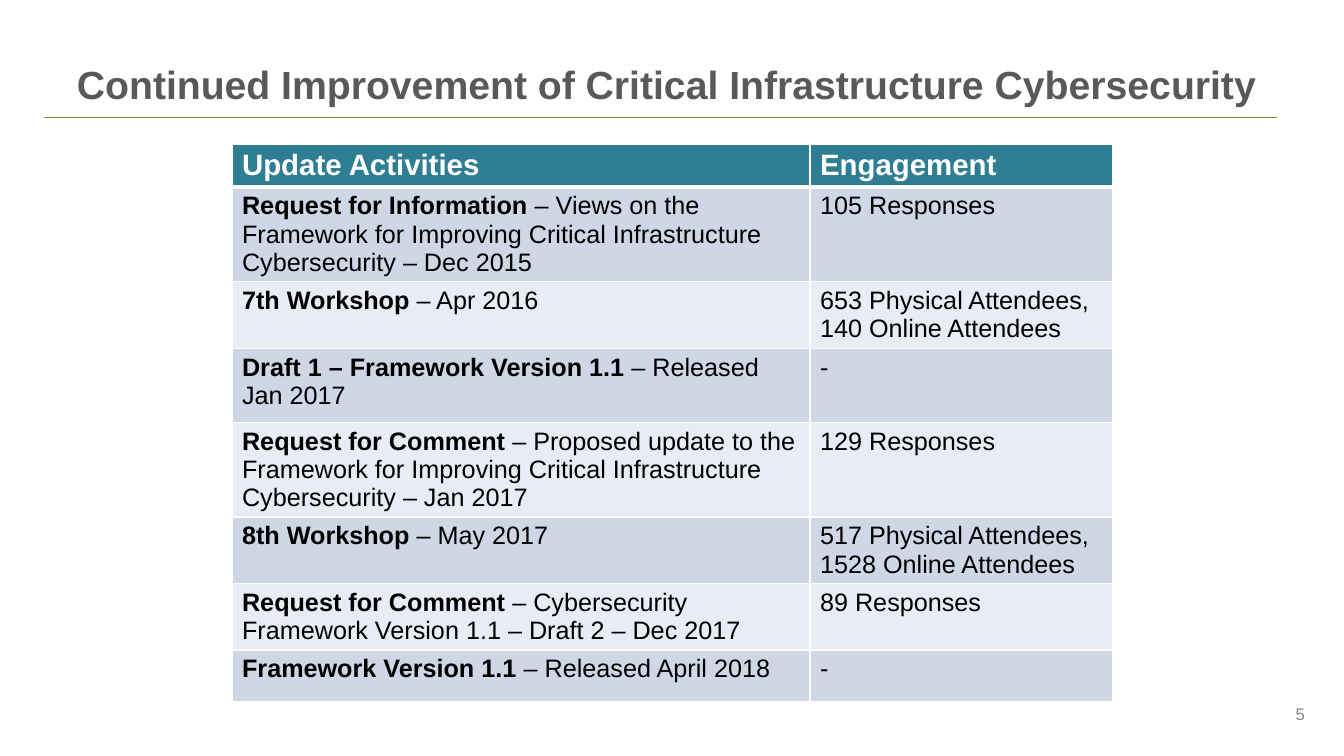
from lxml.etree import SubElement
from pptx import Presentation
from pptx.dml.color import RGBColor as RGB
from pptx.enum.shapes import MSO_CONNECTOR as LINE
from pptx.enum.text import MSO_ANCHOR as ANCHOR, PP_ALIGN as ALIGN
from pptx.oxml import parse_xml
from pptx.oxml.ns import nsdecls, qn
from pptx.util import Pt

PX = 914400 / 100.8
COLORS = {
    "title": "595959", "rule": "76923C", "page": "888888",
    "head": "2E7D92", "odd": "CFD7E7", "even": "E8ECF4",
    "white": "FFFFFF", "black": "000000",
}
HEADS = ("Update Activities", "Engagement")
# bold lead, rest of the activity, engagement, least row height
ROWS = [
    ("Request for Information ", "– Views on the Framework for Improving "
     "Critical Infrastructure Cybersecurity – Dec 2015", "105 Responses", 59),
    ("7th Workshop ", "– Apr 2016",
     "653 Physical Attendees, 140 Online Attendees", 52),
    ("Draft 1 – Framework Version 1.1 ", "– Released Jan 2017", "-", 74),
    ("Request for Comment ", "– Proposed update to the Framework for Improving "
     "Critical Infrastructure Cybersecurity – Jan 2017", "129 Responses", 74),
    ("8th Workshop ", "– May 2017",
     "517 Physical Attendees, 1528 Online Attendees", 52),
    ("Request for Comment ", "– Cybersecurity Framework Version 1.1 – Draft 2 "
     "– Dec 2017", "89 Responses", 59),
    ("Framework Version 1.1 ", "– Released April 2018", "-", 52),
]


def px(n):
    return round(n * PX)


def color(key):
    return RGB.from_string(COLORS[key])


def write(frame, text, size=18, ink="black", bold=False, align=None, space=None):
    """Add a run of text to the first paragraph of a frame."""
    para = frame.paragraphs[0]
    if align is not None:
        para.alignment = align
    if space is not None:
        para.line_spacing = space
    run = para.add_run()
    run.text = text
    font = run.font
    font.name, font.size, font.bold = "Arial", Pt(size), bold
    font.color.rgb = color(ink)


def label(slide, box, text, anchor, side=10, **style):
    frame = slide.shapes.add_textbox(*map(px, box)).text_frame
    frame.word_wrap = True
    frame.vertical_anchor = anchor
    frame.margin_left = frame.margin_right = px(side)
    frame.margin_top = frame.margin_bottom = px(5)
    write(frame, text, **style)


def rule(slide, x, y, width):
    line = slide.shapes.add_connector(
        LINE.STRAIGHT, px(x), px(y), px(x + width), px(y))
    line.line.color.rgb = color("rule")
    line.line.width = Pt(0.75)
    SubElement(line._element.spPr, qn("a:effectLst"))


def paint(cell, fill, top=1, bottom=1):
    """Fill a cell and draw its white borders, widths in points."""
    cell.fill.solid()
    cell.fill.fore_color.rgb = color(fill)
    props = cell._tc.get_or_add_tcPr()
    for i, (edge, width) in enumerate(zip("LRTB", (1, 1, top, bottom))):
        props.insert(i, parse_xml(
            f'<a:ln{edge} {nsdecls("a")} w="{Pt(width)}"><a:solidFill>'
            f'<a:srgbClr val="{COLORS["white"]}"/></a:solidFill></a:ln{edge}>'))


def grid(slide, box):
    shape = slide.shapes.add_table(len(ROWS) + 1, len(HEADS), *map(px, box))
    table = shape.table
    table.horz_banding = False
    left = 578
    for col, width in zip(table.columns, (left, box[2] - left)):
        col.width = px(width)
    table.rows[0].height = px(38)
    for c, head in enumerate(HEADS):
        cell = table.cell(0, c)
        paint(cell, "head", bottom=3)
        write(cell.text_frame, head, size=21, ink="white", bold=True)
    for r, (lead, rest, count, height) in enumerate(ROWS, 1):
        table.rows[r].height = px(height)
        first, last = table.cell(r, 0), table.cell(r, 1)
        for cell in (first, last):
            paint(cell, "odd" if r % 2 else "even", top=3 if r == 1 else 1)
        write(first.text_frame, lead, bold=True)
        write(first.text_frame, rest)
        write(last.text_frame, count)
    shape.height = px(box[3])


def main():
    deck = Presentation()
    deck.slide_width, deck.slide_height = px(1344), px(756)
    slide = deck.slides.add_slide(deck.slide_layouts[6])
    rule(slide, 44, 118, 1233)
    grid(slide, (232, 144, 881, 585))
    label(slide, (72, 3, 1200, 109),
          "Continued Improvement of Critical Infrastructure Cybersecurity",
          ANCHOR.BOTTOM, side=5, size=28, ink="title", bold=True, space=0.81)
    label(slide, (1080, 694, 235, 40), "5", ANCHOR.MIDDLE,
          size=12, ink="page", align=ALIGN.RIGHT)
    deck.save("out.pptx")


if __name__ == "__main__":
    main()
